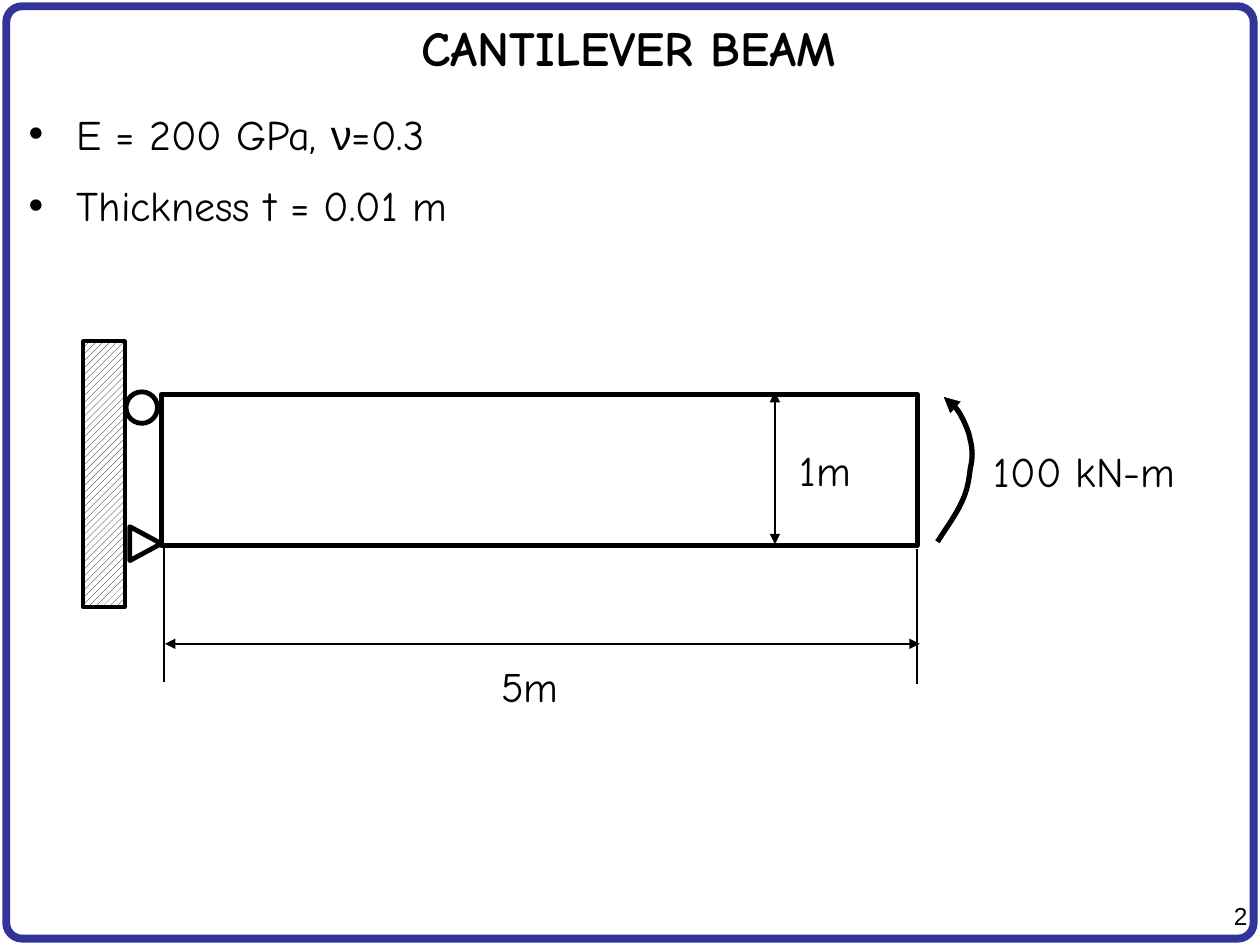
from lxml import etree
from pptx import Presentation
from pptx.dml.color import RGBColor
from pptx.enum.dml import MSO_PATTERN
from pptx.enum.shapes import MSO_CONNECTOR, MSO_SHAPE
from pptx.enum.text import MSO_ANCHOR, PP_ALIGN
from pptx.oxml.ns import qn
from pptx.util import Inches, Pt

RECT, ROUNDED = MSO_SHAPE.RECTANGLE, MSO_SHAPE.ROUNDED_RECTANGLE
OVAL, TRIANGLE = MSO_SHAPE.OVAL, MSO_SHAPE.ISOSCELES_TRIANGLE
STRAIGHT = MSO_CONNECTOR.STRAIGHT
HATCH = MSO_PATTERN.WIDE_UPWARD_DIAGONAL
LEFT, CENTER, RIGHT = PP_ALIGN.LEFT, PP_ALIGN.CENTER, PP_ALIGN.RIGHT
TOP, MIDDLE = MSO_ANCHOR.TOP, MSO_ANCHOR.MIDDLE

INK, PAPER, FRAME = "000000", "FFFFFF", "333399"
HAND, SANS = "Comic Neue", "Arial"


def color(value):
    return RGBColor.from_string(value)


def inches(values):
    return [Inches(value) for value in values]


def add_run(paragraph, text, font=HAND, size=24, bold=False):
    run = paragraph.add_run()
    run.text = text
    formats = {"name": font, "size": Pt(size), "bold": bold}
    for attribute, value in formats.items():
        setattr(run.font, attribute, value)
    run.font.color.rgb = color(INK)


def set_frame(frame, wrap=True, anchor=TOP):
    formats = {"word_wrap": wrap, "vertical_anchor": anchor,
               "margin_left": Inches(0.1), "margin_right": Inches(0.1),
               "margin_top": Inches(0.05), "margin_bottom": Inches(0.05)}
    for attribute, value in formats.items():
        setattr(frame, attribute, value)


def add_label(slide, box, text, font=HAND, size=24, align=LEFT):
    frame = slide.shapes.add_textbox(*inches(box)).text_frame
    set_frame(frame, wrap=False)
    frame.paragraphs[0].alignment = align
    add_run(frame.paragraphs[0], text, font, size)


def set_line(line, width, value=INK):
    line.color.rgb = color(value)
    line.width = Pt(width)


def add_outline(slide, preset, box, width, value=INK):
    shape = slide.shapes.add_shape(preset, *inches(box))
    shape.shadow.inherit = False
    shape.fill.background()
    set_line(shape.line, width, value)
    return shape


def add_arrowheads(line_owner, *ends):
    line = line_owner.line._get_or_add_ln()
    for end in ends:
        etree.SubElement(line, qn(f"a:{end}"), type="triangle")


def add_rule(slide, start, end, arrows=False):
    rule = slide.shapes.add_connector(STRAIGHT, *inches(start + end))
    set_line(rule.line, 1)
    if arrows:
        add_arrowheads(rule, "headEnd", "tailEnd")
    etree.SubElement(rule._element.spPr, qn("a:effectLst"))


def add_border(slide, box):
    border = add_outline(slide, ROUNDED, box, 4.5, FRAME)
    border.adjustments[0] = 0.017


def add_title(slide, box, text):
    title = slide.shapes.title
    for attribute, value in zip(("left", "top", "width", "height"), inches(box)):
        setattr(title, attribute, value)
    set_frame(title.text_frame, anchor=MIDDLE)
    heading = title.text_frame.paragraphs[0]
    heading.alignment = CENTER
    add_run(heading, text, size=28, bold=True)


def add_properties(slide, box, items):
    frame = slide.shapes.add_textbox(*inches(box)).text_frame
    set_frame(frame)
    for index, runs in enumerate(items):
        item = frame.add_paragraph() if index else frame.paragraphs[0]
        item.space_before = Pt(12)
        properties = item._p.get_or_add_pPr()
        properties.set("marL", str(Inches(0.38)))
        properties.set("indent", str(Inches(-0.38)))
        etree.SubElement(properties, qn("a:buFont"), typeface=SANS)
        etree.SubElement(properties, qn("a:buChar"), char="•")
        for text, font in runs:
            add_run(item, text, font)


def add_support(slide, box):
    left, top, width, height = box
    face = left + width
    triangle = add_outline(slide, TRIANGLE, (face + 0.03, top + 1.48, 0.27, 0.25), 2.75)
    triangle.rotation = 90
    add_outline(slide, OVAL, (face + 0.01, top + 0.4, 0.25, 0.25), 2.75)
    wall = add_outline(slide, RECT, box, 2.25)
    wall.fill.patterned()
    wall.fill.pattern = HATCH
    wall.fill.fore_color.rgb = color(INK)
    wall.fill.back_color.rgb = color(PAPER)


def add_beam(slide, box):
    left, top, width, height = box
    right, bottom = left + width, top + height
    add_outline(slide, RECT, box, 2.75)
    for x, y in ((left + 0.02, bottom + 0.01), (right, bottom + 0.03)):
        add_rule(slide, (x, y), (x, y + 1.07))
    span_y, depth_x = bottom + 0.78, right - 1.13
    add_rule(slide, (left + 0.03, span_y), (right + 0.02, span_y), arrows=True)
    add_rule(slide, (depth_x, top - 0.02), (depth_x, bottom - 0.01), arrows=True)
    add_label(slide, (depth_x + 0.1, top + 0.35, 0.61, 0.5), "1m")
    add_label(slide, (left + 2.6, span_y + 0.08, 0.67, 0.5), "5m")


def bezier_point(controls, t):
    weights = ((1 - t) ** 3, 3 * t * (1 - t) ** 2, 3 * t ** 2 * (1 - t), t ** 3)
    return tuple(sum(w * c[axis] for w, c in zip(weights, controls)) for axis in (0, 1))


def add_moment(slide, box):
    left, top, width, height = box
    controls = [(0, 1.15), (0.07, 1.04), (0.15, 0.93), (0.19, 0.84),
                (0.24, 0.74), (0.25, 0.65), (0.26, 0.57),
                (0.28, 0.49), (0.28, 0.42), (0.26, 0.34),
                (0.25, 0.27), (0.2, 0.17), (0.17, 0.12),
                (0.13, 0.06), (0.09, 0.03), (0.05, 0)]
    steps = 8
    points = [bezier_point(controls[first:first + 4], step / steps)
              for first in range(0, len(controls) - 1, 3)
              for step in range(1, steps + 1)]
    start, *rest = [inches((left + x, top + y)) for x, y in [controls[0]] + points]
    builder = slide.shapes.build_freeform(*start)
    builder.add_line_segments(rest, close=False)
    arc = builder.convert_to_shape()
    arc.shadow.inherit = False
    arc.fill.background()
    set_line(arc.line, 3)
    add_arrowheads(arc, "tailEnd")
    add_label(slide, (left + 0.35, top + 0.34, 1.71, 0.5), "100 kN-m")


def main():
    deck = Presentation()
    deck.slide_width, deck.slide_height = inches((10, 7.5))
    slide = deck.slides.add_slide(deck.slide_layouts[5])
    add_border(slide, (0.05, 0.05, 9.9, 7.4))
    add_label(slide, (9.46, 7.1, 0.54, 0.33), "2", SANS, 14, RIGHT)
    add_title(slide, (0.04, 0.05, 9.9, 0.65), "CANTILEVER BEAM")
    add_properties(slide, (0.13, 0.81, 9.74, 6.42), [
        [("E = 200 GPa, ", HAND), ("ν", SANS), ("=0.3", HAND)],
        [("Thickness t = 0.01 m", HAND)],
    ])
    add_beam(slide, (1.28, 3.13, 6, 1.2))
    add_moment(slide, (7.44, 3.15, 0.28, 1.15))
    add_support(slide, (0.66, 2.71, 0.33, 2.11))
    deck.save("out.pptx")


if __name__ == "__main__":
    main()
